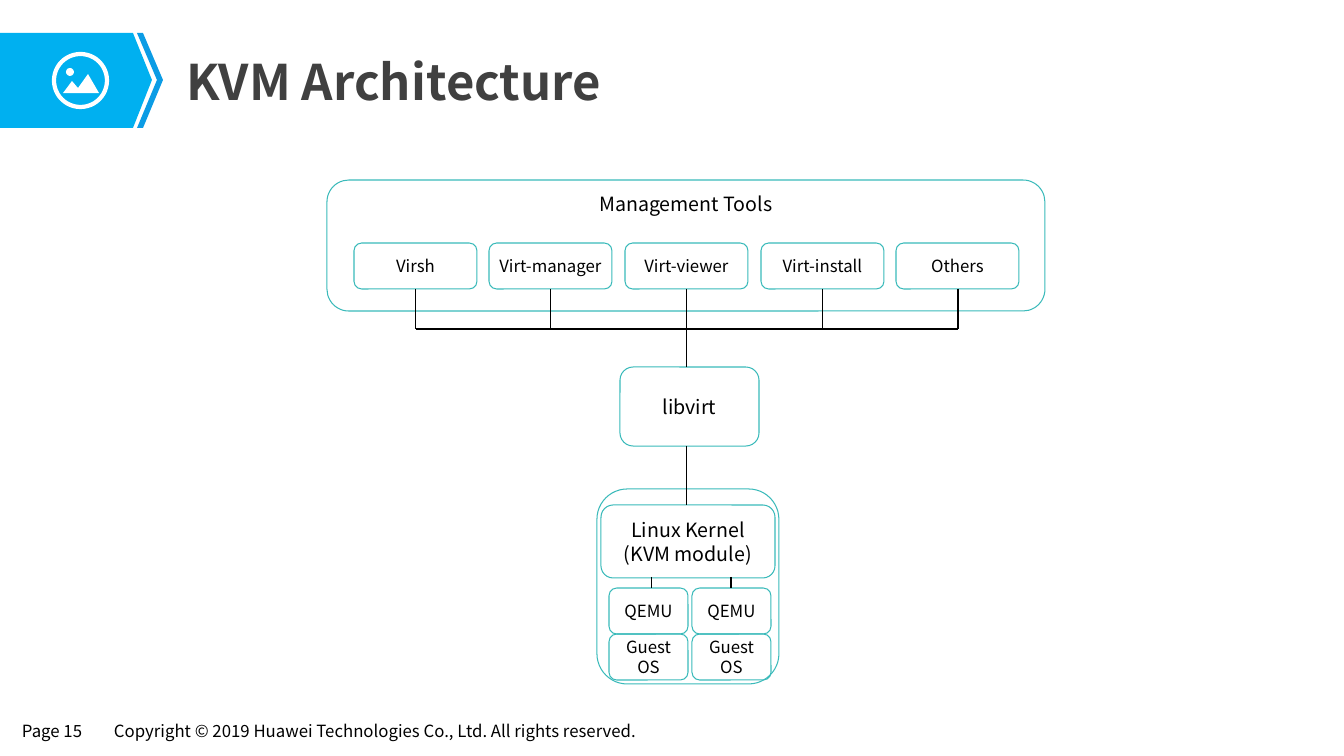
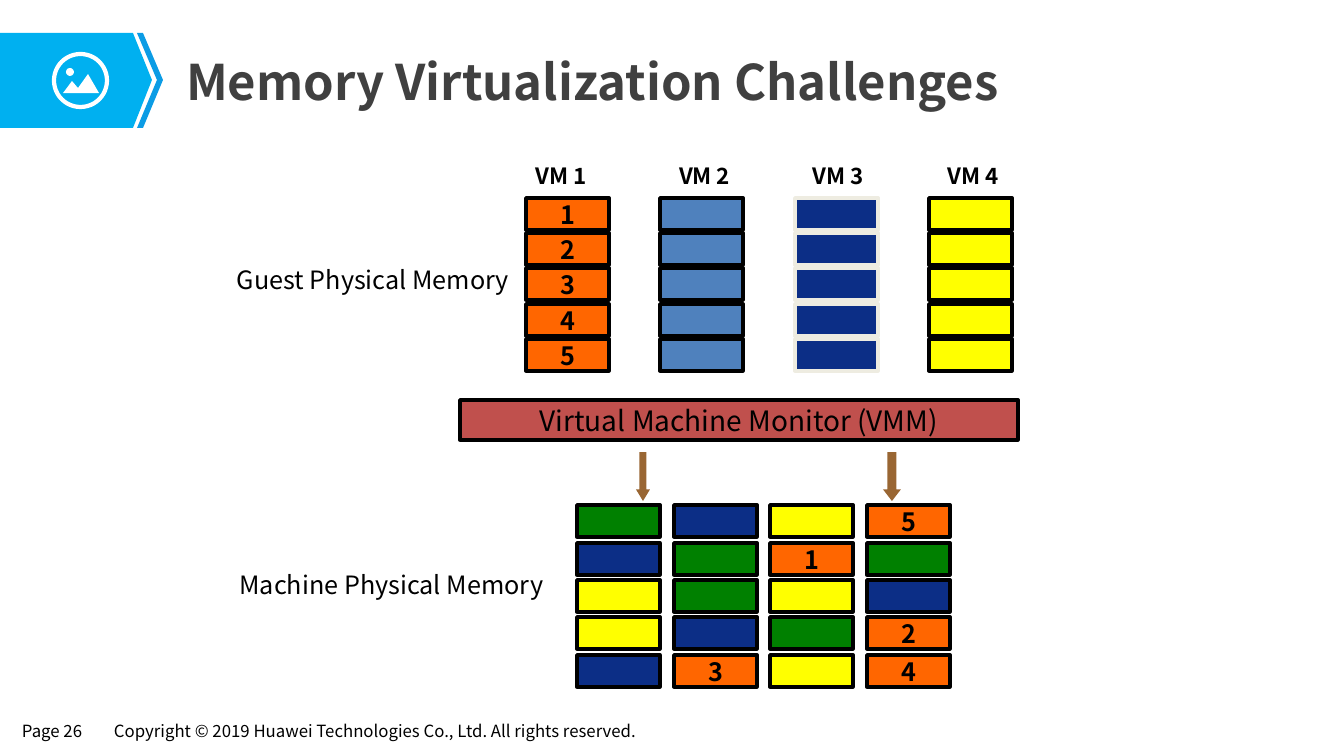
from typing import NamedTuple

from lxml.etree import SubElement
from pptx import Presentation
from pptx.dml.color import RGBColor
from pptx.enum.shapes import MSO_CONNECTOR, MSO_SHAPE
from pptx.enum.text import MSO_ANCHOR, PP_ALIGN
from pptx.oxml.ns import qn
from pptx.util import Emu, Pt

EMU_PER_PX = 914400 / 100.8
FONT = "Noto Sans CJK SC"
BLACK, WHITE, TITLE_GREY = "000000", "FFFFFF", "404040"
TAG_BLUE, STRIPE_BLUE, TEAL = "00B0F0", "0B9CE5", "3ABABA"
ORANGE, STEEL, NAVY, YELLOW, GREEN = "FF6600", "4F81BD", "0C2E86", "FFFF00", "008000"
BRICK, BROWN, CREAM = "C0504D", "996633", "EEECE1"
COPYRIGHT = "Copyright © 2019 Huawei Technologies Co., Ltd. All rights reserved."
INSETS = (10, 5)


class Box(NamedTuple):
    """A rectangle in px."""

    x: int
    y: int
    w: int
    h: int

    def inner(self, x, y, w, h):
        """Return a box whose place is relative to this one."""
        return Box(self.x + x, self.y + y, w, h)


def px(length):
    """Turn px into EMU."""
    return Emu(round(length * EMU_PER_PX))


def rgb(value):
    """Turn a hex string into a colour."""
    return RGBColor.from_string(value)


def spread(first, last, count):
    """Return evenly spaced positions from first to last."""
    return [round(first + (last - first) * i / (count - 1)) for i in range(count)]


def write(frame, lines, size, color=BLACK, bold=False, align=PP_ALIGN.LEFT,
          anchor=MSO_ANCHOR.TOP, wrap=True, insets=INSETS):
    """Fill a text frame with one run per line."""
    frame.word_wrap = wrap
    frame.vertical_anchor = anchor
    frame.margin_left = frame.margin_right = px(insets[0])
    frame.margin_top = frame.margin_bottom = px(insets[1])
    for i, line in enumerate(lines):
        paragraph = frame.paragraphs[0] if i == 0 else frame.add_paragraph()
        paragraph.alignment = align
        run = paragraph.add_run()
        run.text = line
        run.font.name, run.font.size, run.font.bold = FONT, Pt(size), bold
        run.font.color.rgb = rgb(color)


def paint(shape, fill=None, line=None, width=0.75):
    """Set fill and outline and drop the shadow."""
    shape.shadow.inherit = False
    if fill:
        shape.fill.solid()
        shape.fill.fore_color.rgb = rgb(fill)
    else:
        shape.fill.background()
    if line:
        shape.line.color.rgb = rgb(line)
        shape.line.width = Pt(width)
    else:
        shape.line.fill.background()
    return shape


def add_preset(slide, kind, box, fill=None, line=None, width=0.75):
    """Add a painted preset shape."""
    shape = slide.shapes.add_shape(kind, *map(px, box))
    return paint(shape, fill, line, width)


def add_outline(slide, box, points, fill):
    """Add a filled polygon with points relative to the box."""
    corners = [(box.x + x, box.y + y) for x, y in points]
    builder = slide.shapes.build_freeform(*corners[0], scale=EMU_PER_PX)
    builder.add_line_segments(corners[1:], close=True)
    paint(builder.convert_to_shape(), fill)


def add_label(slide, box, text, size, **style):
    """Add a text box."""
    label = slide.shapes.add_textbox(*map(px, box))
    write(label.text_frame, [text], size, **style)


def add_line(slide, x1, y1, x2, y2):
    """Add a thin straight black line."""
    line = slide.shapes.add_connector(MSO_CONNECTOR.STRAIGHT, *map(px, (x1, y1, x2, y2)))
    line.line.color.rgb = rgb(BLACK)
    line.line.width = Pt(0.75)
    SubElement(line._element.spPr, qn("a:effectLst"))


def add_node(slide, box, lines=(), size=12, anchor=MSO_ANCHOR.MIDDLE, insets=INSETS):
    """Add a rounded teal box with centred text."""
    node = add_preset(slide, MSO_SHAPE.ROUNDED_RECTANGLE, box, line=TEAL)
    write(node.text_frame, lines, size, align=PP_ALIGN.CENTER, anchor=anchor, insets=insets)


def add_header_tag(slide, box):
    """Draw the blue tag with its landscape icon."""
    mid, right = box.h // 2, box.w
    add_outline(slide, box, [(133, box.h), (0, box.h), (0, 0), (133, 0), (152, mid)], TAG_BLUE)
    add_outline(slide, box, [(right - 20, 0), (right - 26, 0), (right - 6, mid),
                             (right - 26, box.h), (right - 20, box.h), (right, mid)], STRIPE_BLUE)
    add_preset(slide, MSO_SHAPE.OVAL, box.inner(54, 21, 53, 53), line=WHITE, width=3)
    add_preset(slide, MSO_SHAPE.OVAL, box.inner(66, 35, 8, 8), WHITE)
    add_outline(slide, box, [(99, 60), (63, 60), (72, 48), (78, 55), (88, 41)], WHITE)


def add_footer(slide, box, page):
    """Write the page number and the copyright line."""
    for part, text in ((box.inner(0, 0, 85, box.h), f"Page {page}"),
                       (box.inner(92, 0, 571, box.h), COPYRIGHT)):
        add_label(slide, part, text, 12, wrap=False, insets=(9, 4))


def add_titled_slide(deck, title, page):
    """Add a slide with the shared header, title and footer."""
    slide = deck.slides.add_slide(deck.slide_layouts[5])
    add_footer(slide, Box(13, 717, 663, 29), page)
    add_header_tag(slide, Box(0, 33, 163, 95))
    heading = slide.shapes.title
    heading.left, heading.top, heading.width, heading.height = map(px, (175, 45, 1084, 71))
    write(heading.text_frame, [title], 35, TITLE_GREY, True,
          anchor=MSO_ANCHOR.MIDDLE, insets=(11, 6))
    return slide


def add_management_tools(slide, box, bus_y):
    """Draw the tools panel and join its tools on a bus."""
    add_node(slide, box, ["Management Tools"], 14, MSO_ANCHOR.TOP)
    tools = ("Virsh", "Virt-manager", "Virt-viewer", "Virt-install", "Others")
    lefts = spread(27, 569, len(tools))
    centers = [box.x + left + 62 for left in lefts]
    for tool, left, center in zip(tools, lefts, centers):
        add_node(slide, box.inner(left, 63, 123, 46), [tool], insets=(0, 5))
        add_line(slide, center, box.y + 109, center, bus_y)
    add_line(slide, centers[0], bus_y, centers[-1], bus_y)


def add_host(slide, box):
    """Draw the kernel with its two guests."""
    add_node(slide, box)
    add_node(slide, box.inner(4, 16, 174, 73), ["Linux Kernel", "(KVM module)"], 14)
    for left, drop in ((12, 55), (95, 134)):
        for top, layer in ((99, "QEMU"), (145, "Guest OS")):
            add_node(slide, box.inner(left, top, 79, 46), [layer])
        add_line(slide, box.x + drop, box.y + 88, box.x + drop, box.y + 99)


def build_architecture(deck):
    """Build the KVM architecture slide."""
    slide = add_titled_slide(deck, "KVM Architecture", 15)
    trunk, bus_y = 687, 329
    add_management_tools(slide, Box(327, 180, 718, 131), bus_y)
    add_node(slide, Box(620, 367, 139, 79), ["libvirt"], 14)
    add_host(slide, Box(597, 489, 182, 195))
    add_line(slide, trunk, bus_y, trunk, 367)
    add_line(slide, trunk, 446, trunk, 505)


def add_memory_grid(slide, box, columns):
    """Draw columns of pages, each page a fill, number and border."""
    width, height = 83, 32
    for left, pages in zip(spread(0, box.w - width, len(columns)), columns):
        for top, (fill, number, border) in zip(spread(0, box.h - height, len(pages)), pages):
            page = add_preset(slide, MSO_SHAPE.RECTANGLE, box.inner(left, top, width, height),
                              fill, border, 2.5)
            if number:
                write(page.text_frame, [number], 18, bold=True, align=PP_ALIGN.CENTER,
                      anchor=MSO_ANCHOR.MIDDLE, wrap=False)


def add_guest_memory(slide, box):
    """Draw the memory of each VM under its name."""
    columns = [[(ORANGE, number, BLACK) for number in "12345"]]
    columns += [[(fill, "", border)] * 5
                for fill, border in ((STEEL, BLACK), (NAVY, CREAM), (YELLOW, BLACK))]
    add_memory_grid(slide, box, columns)
    for vm, left in enumerate((0, 143, 277, 412), 1):
        add_label(slide, box.inner(left, -41, 91, 37), f"VM {vm}", 16, bold=True)


def add_machine_memory(slide, box):
    """Draw the machine pages, a digit being a page of VM 1."""
    fills = {"G": GREEN, "B": NAVY, "Y": YELLOW}
    add_memory_grid(slide, box, [
        [(fills.get(code, ORANGE), code if code.isdigit() else "", BLACK) for code in column]
        for column in ("GBYYB", "BGGB3", "Y1YGY", "5GB24")])


def add_monitor(slide, box):
    """Draw the monitor bar and the two arrows below it."""
    bar = add_preset(slide, MSO_SHAPE.RECTANGLE, box, BRICK, BLACK, 2.5)
    write(bar.text_frame, ["Virtual Machine Monitor (VMM)"], 20, align=PP_ALIGN.CENTER,
          anchor=MSO_ANCHOR.MIDDLE, wrap=False)
    for left, width, head in ((176, 14, 0.83), (423, 18, 0.65)):
        arrow = add_preset(slide, MSO_SHAPE.DOWN_ARROW, box.inner(left, 52, width, 49), BROWN)
        arrow.adjustments[0], arrow.adjustments[1] = 0.5, head


def build_memory(deck):
    """Build the memory virtualization slide."""
    slide = add_titled_slide(deck, "Memory Virtualization Challenges", 26)
    for box, text in ((Box(220, 259, 306, 40), "Guest Physical Memory"),
                      (Box(221, 564, 341, 40), "Machine Physical Memory")):
        add_label(slide, box, text, 18, align=PP_ALIGN.CENTER, wrap=False)
    add_guest_memory(slide, Box(526, 198, 486, 173))
    add_monitor(slide, Box(460, 400, 558, 40))
    add_machine_memory(slide, Box(577, 505, 373, 182))


def main():
    """Build and save the deck."""
    deck = Presentation()
    deck.slide_width, deck.slide_height = px(1344), px(756)
    build_architecture(deck)
    build_memory(deck)
    deck.save("out.pptx")


if __name__ == "__main__":
    main()
